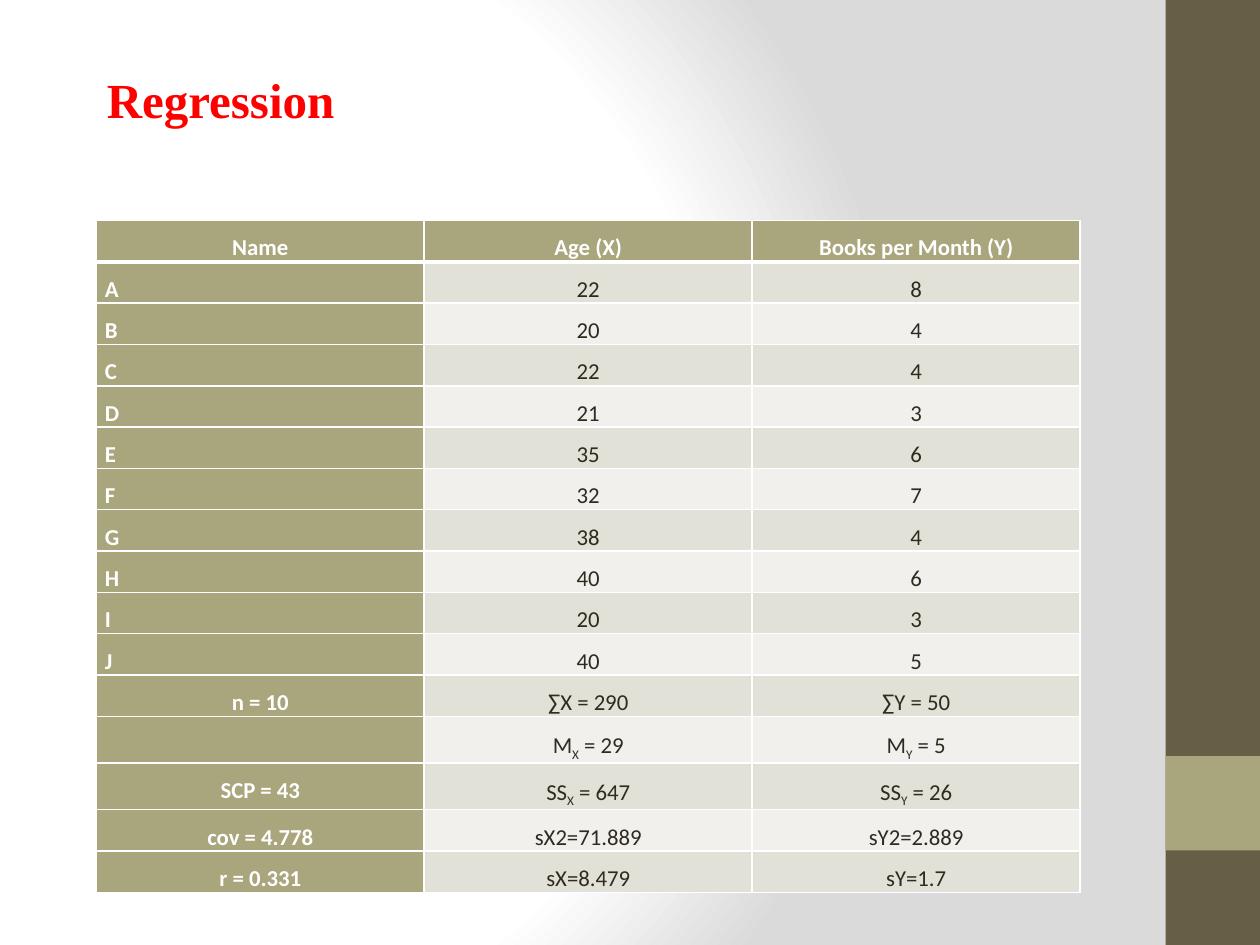
import pptx
import pptx.dml.color
import pptx.enum.shapes
import pptx.enum.text
import pptx.oxml
import pptx.oxml.ns
import pptx.util

Pt = pptx.util.Pt
RGBColor = pptx.dml.color.RGBColor
Align = pptx.enum.text.PP_ALIGN

WHITE = RGBColor(0xFF, 0xFF, 0xFF)
GREY = RGBColor(0xDA, 0xDA, 0xDA)
RED = RGBColor(0xFF, 0x00, 0x00)
BROWN = RGBColor(0x67, 0x5E, 0x47)
OLIVE = RGBColor(0xA9, 0xA5, 0x7C)
INK = RGBColor(0x2F, 0x2B, 0x20)
BANDS = (RGBColor(0xF1, 0xF0, 0xEC), RGBColor(0xE2, 0xE1, 0xD7))

ROWS = [
    ("Name", "Age (X)", "Books per Month (Y)"),
    ("A", "22", "8"),
    ("B", "20", "4"),
    ("C", "22", "4"),
    ("D", "21", "3"),
    ("E", "35", "6"),
    ("F", "32", "7"),
    ("G", "38", "4"),
    ("H", "40", "6"),
    ("I", "20", "3"),
    ("J", "40", "5"),
    ("n = 10", "∑X = 290", "∑Y = 50"),
    ("", "M_X_ = 29", "M_Y_ = 5"),
    ("SCP = 43", "SS_X_ = 647", "SS_Y_ = 26"),
    ("cov = 4.778", "sX2=71.889", "sY2=2.889"),
    ("r = 0.331", "sX=8.479", "sY=1.7"),
]


class Painter:
    """Draw styled elements on the current page; text between underscores is subscript."""

    body_font = "Calibri"
    body_size = 13
    title_font = "Times New Roman"
    title_size = 28

    def __init__(self, page):
        self.page = page

    def background(self, inner, outer):
        stops = "".join(
            f'<a:gs pos="{place * 1000}"><a:srgbClr val="{color}"/></a:gs>'
            for place, color in ((0, inner), (75, inner), (100, outer))
        )
        backdrop = pptx.oxml.parse_xml(
            f'<p:bg {pptx.oxml.ns.nsdecls("p", "a")}><p:bgPr><a:gradFill rotWithShape="1">'
            f'<a:gsLst>{stops}</a:gsLst><a:path path="circle">'
            '<a:fillToRect l="20000" t="50000" r="100000" b="50000"/></a:path>'
            "</a:gradFill><a:effectLst/></p:bgPr></p:bg>"
        )
        self.page.element.cSld.insert(0, backdrop)

    def block(self, left, top, width, height, color):
        shape = self.page.shapes.add_shape(
            pptx.enum.shapes.MSO_SHAPE.RECTANGLE, Pt(left), Pt(top), Pt(width), Pt(height)
        )
        shape.shadow.inherit = False
        shape.fill.solid()
        shape.fill.fore_color.rgb = color
        shape.line.fill.background()

    def style(self, para, name, size, color, bold):
        para.font.name = name
        para.font.size = Pt(size)
        para.font.color.rgb = color
        para.font.bold = bold

    def title(self, text, left, top, width, height):
        box = self.page.shapes.add_textbox(Pt(left), Pt(top), Pt(width), Pt(height))
        box.text_frame.word_wrap = True
        para = box.text_frame.paragraphs[0]
        para.text = text
        self.style(para, self.title_font, self.title_size, RED, True)

    def borders(self, cell, top, bottom):
        properties = cell._tc.get_or_add_tcPr()
        widths = {"lnL": 1, "lnR": 1, "lnT": top, "lnB": bottom}
        for index, (side, width) in enumerate(widths.items()):
            line = pptx.oxml.parse_xml(
                f'<a:{side} {pptx.oxml.ns.nsdecls("a")} w="{Pt(width)}"><a:solidFill>'
                f'<a:srgbClr val="{WHITE}"/></a:solidFill></a:{side}>'
            )
            properties.insert(index, line)

    def cell(self, cell, text, fill, color, bold, align):
        cell.margin_left = cell.margin_right = Pt(5)
        cell.margin_top = cell.margin_bottom = 0
        cell.fill.solid()
        cell.fill.fore_color.rgb = fill
        para = cell.text_frame.paragraphs[0]
        para.alignment = align
        para.line_spacing = 1.5
        self.style(para, self.body_font, self.body_size, color, bold)
        for index, part in enumerate(text.split("_") if text else []):
            span = para.add_run()
            span.text = part
            if index % 2:
                span._r.get_or_add_rPr().set("baseline", "-25000")

    def table(self, rows, left, top, width, height):
        frame = self.page.shapes.add_table(
            len(rows), len(rows[0]), Pt(left), Pt(top), Pt(width), Pt(height)
        )
        for row in frame.table.rows:
            row.height = Pt(height / len(rows))
        for row, texts in enumerate(rows):
            for column, text in enumerate(texts):
                heading = row == 0 or column == 0
                letter = column == 0 and len(text) == 1
                cell = frame.table.cell(row, column)
                self.cell(
                    cell,
                    text,
                    OLIVE if heading else BANDS[row % 2],
                    WHITE if heading else INK,
                    heading,
                    Align.JUSTIFY if letter else Align.CENTER,
                )
                self.borders(cell, 3 if row == 1 else 1, 3 if row == 0 else 1)


def main():
    deck = pptx.Presentation()
    deck.slide_width, deck.slide_height = Pt(720), Pt(540)
    painter = Painter(deck.slides.add_slide(deck.slide_layouts[6]))
    painter.background(WHITE, GREY)
    painter.block(666, 0, 54, 540, BROWN)
    painter.block(666, 432, 54, 54, OLIVE)
    painter.title("Regression", 54, 36, 408, 41)
    painter.table(ROWS, 55, 126, 562.2, 378)
    deck.save("out.pptx")


if __name__ == "__main__":
    main()
